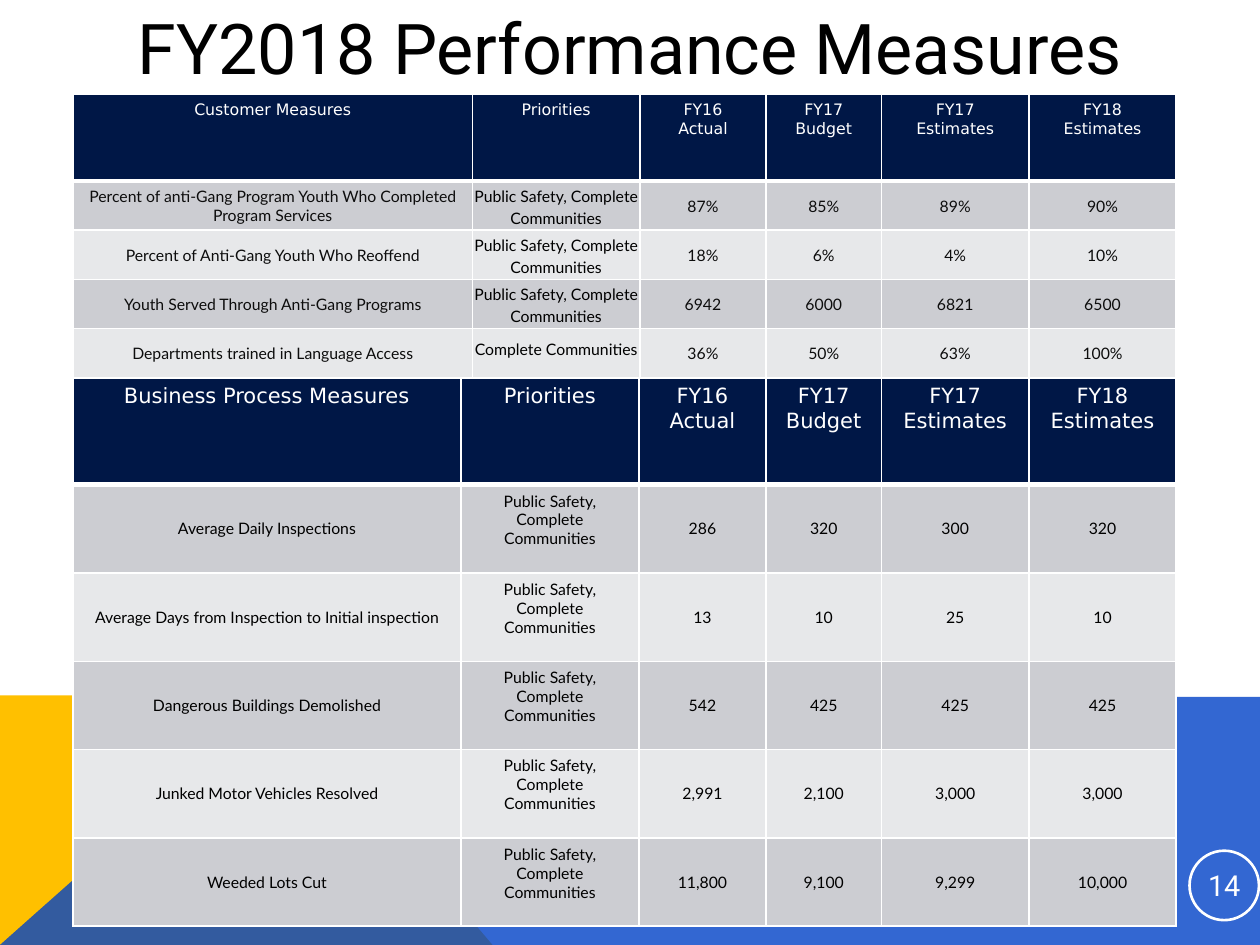
from lxml import etree
from pptx import Presentation
from pptx.dml.color import RGBColor
from pptx.enum.shapes import MSO_SHAPE
from pptx.enum.text import MSO_ANCHOR, PP_ALIGN
from pptx.oxml.ns import qn
from pptx.util import Cm, Pt

TOP, MIDDLE = MSO_ANCHOR.TOP, MSO_ANCHOR.MIDDLE
CENTER = PP_ALIGN.CENTER
OVAL = MSO_SHAPE.OVAL

TITLE = "FY2018 Performance Measures"
PAGE = "14"
YEARS = ["FY16\nActual", "FY17\nBudget", "FY17\nEstimates", "FY18\nEstimates"]
SAFETY = "Public Safety, Complete Communities"

TABLES = [
    {
        "rows": [
            ["Customer Measures", "Priorities", *YEARS],
            ["Percent of anti-Gang Program Youth Who Completed Program Services",
             SAFETY, "87%", "85%", "89%", "90%"],
            ["Percent of Anti-Gang Youth Who Reoffend", SAFETY, "18%", "6%", "4%", "10%"],
            ["Youth Served Through Anti-Gang Programs", SAFETY, "6942", "6000", "6821", "6500"],
            ["Departments trained in Language Access", "Complete Communities",
             "36%", "50%", "63%", "100%"],
        ],
        "top": 1.91, "cols": [8.05, 3.38, 2.54, 2.33, 2.97, 2.97],
        "head_height": 1.74, "row_height": 0.99, "head_size": 9, "ink": "0D0D0D",
        "margins": (0.02, 0.02, 0.02, 0), "priority_spacing": 1.15,
        "lifts": {"Complete Communities": 0.22},
    },
    {
        "rows": [
            ["Business Process Measures", "Priorities", *YEARS],
            ["Average Daily Inspections", SAFETY, "286", "320", "300", "320"],
            ["Average Days from Inspection to Initial inspection",
             SAFETY, "13", "10", "25", "10"],
            ["Dangerous Buildings Demolished", SAFETY, "542", "425", "425", "425"],
            ["Junked Motor Vehicles Resolved", SAFETY, "2,991", "2,100", "3,000", "3,000"],
            ["Weeded Lots Cut", SAFETY, "11,800", "9,100", "9,299", "10,000"],
        ],
        "top": 7.62, "cols": [7.82, 3.59, 2.56, 2.33, 2.97, 2.97],
        "head_height": 2.15, "row_height": 1.78, "head_size": 12, "ink": "000000",
        "margins": (0.25, 0.25, 0.13, 0.13), "priority_spacing": None,
        "lifts": {SAFETY: 0.36},
    },
]

THEME = {
    "gold": "FFC000", "blue": "0042C7", "navy": "001746", "white": "FFFFFF",
    "black": "000000", "bands": ("CCCDD2", "E7E8EA"),
    "title_font": "Roboto", "head_font": "DejaVu Sans", "body_font": "Lato",
    "title": 40, "page": 16.5, "body": 9, "rule": 1, "head_rule": 3,
}
WIDTH, HEIGHT, TABLE_LEFT = 25.4, 19.05, 1.47
BAND_TOP, BAND_CORNER = 14.02, 5.66
DEFAULT_MARGINS = (0.25, 0.25, 0.13, 0.13)
BACKDROP = [
    ("gold", 100, [(0, HEIGHT), (0, BAND_TOP), (BAND_CORNER, BAND_TOP), (9.93, HEIGHT)]),
    ("blue", 80, [(0, HEIGHT), (BAND_CORNER, BAND_TOP), (WIDTH, 14.05), (WIDTH, HEIGHT)]),
]


def rgb(value):
    return RGBColor.from_string(value)


def write(tf, text, font, size, color, spacing=None):
    tf.word_wrap = True
    tf.text = text
    for p in tf.paragraphs:
        p.alignment = CENTER
        if spacing:
            p.line_spacing = spacing
        p.font.name, p.font.size, p.font.bold = font, Pt(size), False
        p.font.color.rgb = rgb(color)


def set_margins(target, margins):
    (target.margin_left, target.margin_right,
     target.margin_top, target.margin_bottom) = map(Cm, margins)


def set_borders(cell, widths):
    tc_pr = cell._tc.get_or_add_tcPr()
    for i, (side, width) in enumerate(zip("LRTB", widths)):
        ln = etree.Element(qn("a:ln" + side), w=str(Pt(width)))
        fill = etree.SubElement(ln, qn("a:solidFill"))
        etree.SubElement(fill, qn("a:srgbClr"), val=THEME["white"])
        tc_pr.insert(i, ln)


def add_backdrop(s):
    for color, alpha, points in BACKDROP:
        start, *rest = [(Cm(x), Cm(y)) for x, y in points]
        builder = s.shapes.build_freeform(*start)
        builder.add_line_segments(rest, close=True)
        sp = builder.convert_to_shape()
        sp.shadow.inherit = False
        sp.fill.solid()
        sp.fill.fore_color.rgb = rgb(THEME[color])
        sp.line.fill.background()
        if alpha < 100:
            clr = sp.fill._xPr.find(".//" + qn("a:srgbClr"))
            etree.SubElement(clr, qn("a:alpha"), val=str(alpha * 1000))


def add_page_badge(s):
    sp = s.shapes.add_shape(OVAL, Cm(23.98), Cm(17.15), Cm(1.4), Cm(1.4))
    sp.shadow.inherit = False
    sp.fill.background()
    sp.line.color.rgb = rgb(THEME["white"])
    sp.line.width = Pt(1.5)
    tf = sp.text_frame
    tf.vertical_anchor = MIDDLE
    set_margins(tf, (0.02,) * 4)
    write(tf, PAGE, THEME["title_font"], THEME["page"], THEME["white"])


def add_measures(s, data):
    rows, cols = data["rows"], data["cols"]
    heights = [data["head_height"]] + [data["row_height"]] * (len(rows) - 1)
    table = s.shapes.add_table(len(rows), len(cols), Cm(TABLE_LEFT), Cm(data["top"]),
                               Cm(sum(cols)), Cm(sum(heights))).table
    table.horz_banding = False
    for column, width in zip(table.columns, cols):
        column.width = Cm(width)
    for i, (texts, height) in enumerate(zip(rows, heights)):
        table.rows[i].height = Cm(height)
        head = i == 0
        for j, text in enumerate(texts):
            cell = table.cell(i, j)
            priority = j == 1 and not head
            left, right, top, bottom = DEFAULT_MARGINS if head else data["margins"]
            if priority:
                bottom += data["lifts"].get(text, 0)
            set_margins(cell, (left, right, top, bottom))
            cell.vertical_anchor = TOP if head else MIDDLE
            cell.fill.solid()
            cell.fill.fore_color.rgb = rgb(THEME["navy"] if head else THEME["bands"][(i - 1) % 2])
            rule, thick = THEME["rule"], THEME["head_rule"]
            set_borders(cell, (rule, rule, thick if i == 1 else rule, thick if head else rule))
            if head:
                style = THEME["head_font"], data["head_size"], THEME["white"]
            else:
                style = THEME["body_font"], THEME["body"], THEME["black"] if priority else data["ink"]
            write(cell.text_frame, text, *style, data["priority_spacing"] if priority else None)


def add_title(s):
    tf = s.shapes.add_textbox(Cm(1.27), Cm(-0.03), Cm(22.86), Cm(1.96)).text_frame
    write(tf, TITLE, THEME["title_font"], THEME["title"], THEME["black"])


def main():
    """Build the performance measures slide."""
    prs = Presentation()
    prs.slide_width, prs.slide_height = Cm(WIDTH), Cm(HEIGHT)
    s = prs.slides.add_slide(prs.slide_layouts[6])
    add_backdrop(s)
    add_page_badge(s)
    for data in TABLES:
        add_measures(s, data)
    add_title(s)
    prs.save("out.pptx")


if __name__ == "__main__":
    main()
